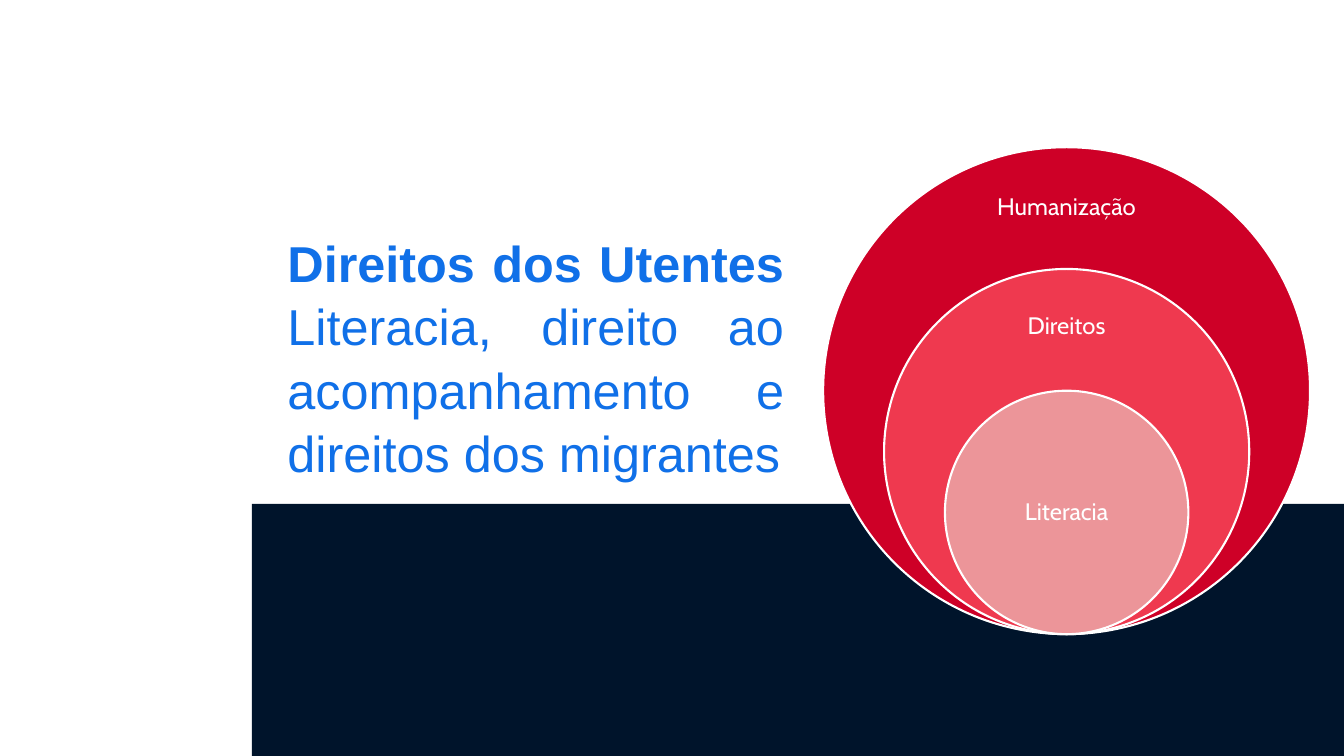
from dataclasses import dataclass
from pptx import Presentation
from pptx.dml.color import RGBColor
from pptx.enum.shapes import MSO_SHAPE
from pptx.enum.text import MSO_ANCHOR, MSO_AUTO_SIZE, PP_ALIGN
from pptx.util import Cm, Pt


@dataclass(frozen=True)
class Theme:
    navy: str = "00142B"
    blue: str = "1070E8"
    white: str = "FFFFFF"
    rings: tuple = ("CE0027", "EF394F", "EC9599")
    head: int = 36
    label: int = 17


theme = Theme()


def write(par, text, font, size, color, bold=False):
    run = par.add_run()
    run.text = text
    run.font.name = font
    run.font.size = Pt(size)
    run.font.bold = bold
    run.font.color.rgb = RGBColor.from_string(color)


def draw(shapes, kind, box, fill, line=None):
    shape = shapes.add_shape(kind, *map(Cm, box))
    shape.shadow.inherit = False
    shape.fill.solid()
    shape.fill.fore_color.rgb = RGBColor.from_string(fill)
    if line:
        shape.line.color.rgb = RGBColor.from_string(line)
        shape.line.width = Pt(1.5)
    else:
        shape.line.fill.background()


# Slide
deck = Presentation()
deck.slide_width, deck.slide_height = Cm(33.87), Cm(19.05)
slide = deck.slides.add_slide(deck.slide_layouts[5])

# Dark band
draw(slide.shapes, MSO_SHAPE.RECTANGLE, (6.35, 12.7, 27.52, 6.35), theme.navy)

# Title
title = slide.shapes.title
title.left, title.top = Cm(6.99), Cm(5.49)
title.width, title.height = Cm(13.03), Cm(6.8)
frame = title.text_frame
frame.word_wrap = True
frame.auto_size = MSO_AUTO_SIZE.NONE
frame.vertical_anchor = MSO_ANCHOR.BOTTOM
par = frame.paragraphs[0]
par.alignment = PP_ALIGN.JUSTIFY
par.line_spacing = 1.05
style = dict(font="Arial", size=theme.head, color=theme.blue)
write(par, "Direitos dos Utentes", bold=True, **style)
par.add_line_break()
write(par, "Literacia, direito ao acompanhamento e direitos dos migrantes", **style)

# Nested circles, sharing their lowest point
mid, base, full = 26.88, 15.98, 12.27
wide = 4.3
labels = [("Humanização", 4.32, 1.83), ("Direitos", 7.37, 1.73), ("Literacia", 11.38, 3.07)]
group = slide.shapes.add_group_shape()
for step, (text, top, high) in enumerate(labels):
    size = full * (1 - step / 4)
    draw(group.shapes, MSO_SHAPE.OVAL, (mid - size / 2, base - size, size, size),
         theme.rings[step], line=theme.white)
    box = group.shapes.add_textbox(Cm(mid - wide / 2), Cm(top), Cm(wide), Cm(high))
    frame = box.text_frame
    frame.word_wrap = True
    frame.vertical_anchor = MSO_ANCHOR.MIDDLE
    frame.margin_left = frame.margin_right = Cm(0.33)
    frame.margin_top = frame.margin_bottom = Cm(0.33)
    par = frame.paragraphs[0]
    par.alignment = PP_ALIGN.CENTER
    par.line_spacing = 0.9
    write(par, text, font="Cabin", size=theme.label, color=theme.white)

deck.save("out.pptx")
